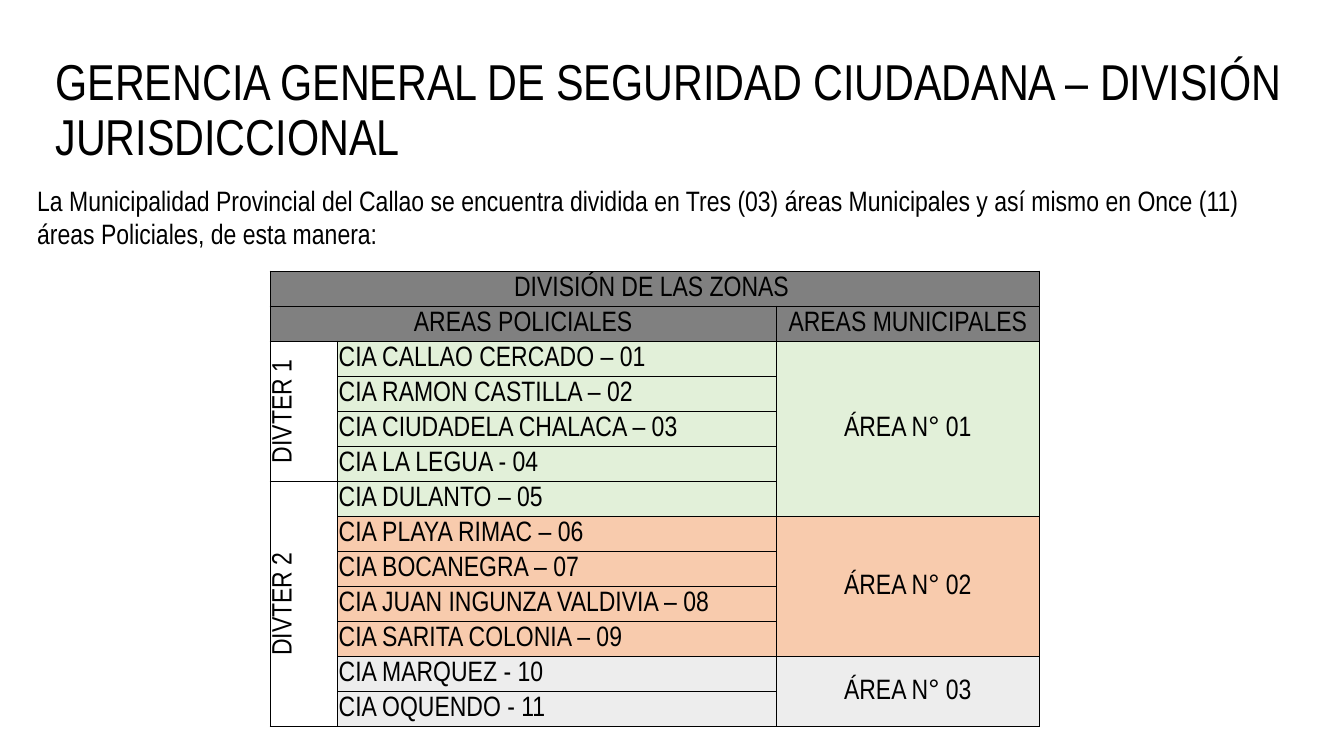
from lxml.etree import SubElement
from pptx import Presentation
from pptx.dml.color import RGBColor
from pptx.enum.text import MSO_ANCHOR, MSO_AUTO_SIZE, PP_ALIGN
from pptx.oxml.ns import qn
from pptx.util import Inches, Pt

BLACK = RGBColor(0x00, 0x00, 0x00)
GREY = RGBColor(0x80, 0x80, 0x80)
GREEN = RGBColor(0xE2, 0xF0, 0xD9)
ORANGE = RGBColor(0xF8, 0xCB, 0xAD)
SILVER = RGBColor(0xED, 0xED, 0xED)
FONT = "Arial Narrow"

TITLE = "GERENCIA GENERAL DE SEGURIDAD CIUDADANA – DIVISIÓN JURISDICCIONAL"
INTRO = ("La Municipalidad Provincial del Callao se encuentra dividida en Tres (03) áreas "
         "Municipales y así mismo en Once (11) áreas Policiales, de esta manera:")
WIDTHS = (0.67, 4.35, 2.61)
UNITS = ("CIA CALLAO CERCADO – 01", "CIA RAMON CASTILLA – 02",
         "CIA CIUDADELA CHALACA – 03", "CIA LA LEGUA - 04", "CIA DULANTO – 05",
         "CIA PLAYA RIMAC – 06", "CIA BOCANEGRA – 07",
         "CIA JUAN INGUNZA VALDIVIA – 08", "CIA SARITA COLONIA – 09",
         "CIA MARQUEZ - 10", "CIA OQUENDO - 11")
POSTS = (("DIVTER 1", 4), ("DIVTER 2", 7))
AREAS = (("ÁREA N° 01", 5, GREEN), ("ÁREA N° 02", 4, ORANGE), ("ÁREA N° 03", 2, SILVER))
HEAD = 2


def write(frame, text, size, align=PP_ALIGN.LEFT):
    """Write one formatted run in the first paragraph of a frame."""
    para = frame.paragraphs[0]
    para.alignment = align
    run = para.add_run()
    run.text = text
    run.font.name = FONT
    run.font.size = Pt(size)
    run.font.color.rgb = BLACK
    return para


def place(shape, box):
    """Move a shape to a box given in inches."""
    shape.left, shape.top, shape.width, shape.height = map(Inches, box)


def add_title(slide, box):
    """Fill the title placeholder."""
    title = slide.shapes.title
    place(title, box)
    frame = title.text_frame
    frame.word_wrap = True
    frame.auto_size = MSO_AUTO_SIZE.NONE
    frame.vertical_anchor = MSO_ANCHOR.MIDDLE
    write(frame, TITLE, 36).line_spacing = 0.9


def add_intro(slide, box):
    """Add the paragraph that leads into the table."""
    frame = slide.shapes.add_textbox(*map(Inches, box)).text_frame
    frame.word_wrap = True
    frame.auto_size = MSO_AUTO_SIZE.SHAPE_TO_FIT_TEXT
    write(frame, INTRO, 20)


def style(cell, fill):
    """Set the margins, borders and fill of a cell."""
    cell.margin_left = cell.margin_right = cell.margin_top = Inches(0.01)
    cell.margin_bottom = 0
    cell.vertical_anchor = MSO_ANCHOR.MIDDLE
    props = cell._tc.get_or_add_tcPr()
    for side in ("a:lnL", "a:lnR", "a:lnT", "a:lnB"):
        line = SubElement(props, qn(side), w=str(Pt(1)))
        paint = SubElement(line, qn("a:solidFill"))
        SubElement(paint, qn("a:srgbClr"), val=str(BLACK))
    if fill is None:
        cell.fill.background()
    else:
        cell.fill.solid()
        cell.fill.fore_color.rgb = fill


def put(table, row, col, text, fill, rows=1, cols=1, align=PP_ALIGN.CENTER):
    """Write a cell that spans the given rows and columns."""
    for r in range(row, row + rows):
        for c in range(col, col + cols):
            style(table.cell(r, c), fill)
    cell = table.cell(row, col)
    if rows * cols > 1:
        cell.merge(table.cell(row + rows - 1, col + cols - 1))
    write(cell.text_frame, text, 20, align)
    return cell


def add_zones(slide, box):
    """Add the table of police and municipal areas."""
    count = HEAD + len(UNITS)
    table = slide.shapes.add_table(count, len(WIDTHS), *map(Inches, box)).table
    table.first_row = table.horz_banding = False
    for col, width in zip(table.columns, WIDTHS):
        col.width = Inches(width)
    for row in table.rows:
        row.height = Inches(box[3] / count)
    put(table, 0, 0, "DIVISIÓN DE LAS ZONAS ", GREY, cols=3)
    put(table, 1, 0, "AREAS POLICIALES", GREY, cols=2)
    put(table, 1, 2, "AREAS MUNICIPALES", GREY)
    top = HEAD
    for name, size in POSTS:
        cell = put(table, top, 0, name, None, rows=size)
        cell._tc.get_or_add_tcPr().set("vert", "vert270")
        top += size
    top = HEAD
    for name, size, fill in AREAS:
        put(table, top, 2, name, fill, rows=size)
        for row in range(top, top + size):
            put(table, row, 1, UNITS[row - HEAD], fill, align=PP_ALIGN.JUSTIFY)
        top += size


def main():
    """Build the slide and save it."""
    deck = Presentation()
    deck.slide_width, deck.slide_height = Inches(13.33), Inches(7.5)
    slide = deck.slides.add_slide(deck.slide_layouts[5])
    add_title(slide, (0.45, 0.44, 12.71, 1.34))
    add_intro(slide, (0.27, 1.77, 12.75, 0.77))
    add_zones(slide, (2.68, 2.69, sum(WIDTHS), 4.52))
    deck.save("out.pptx")


if __name__ == "__main__":
    main()
